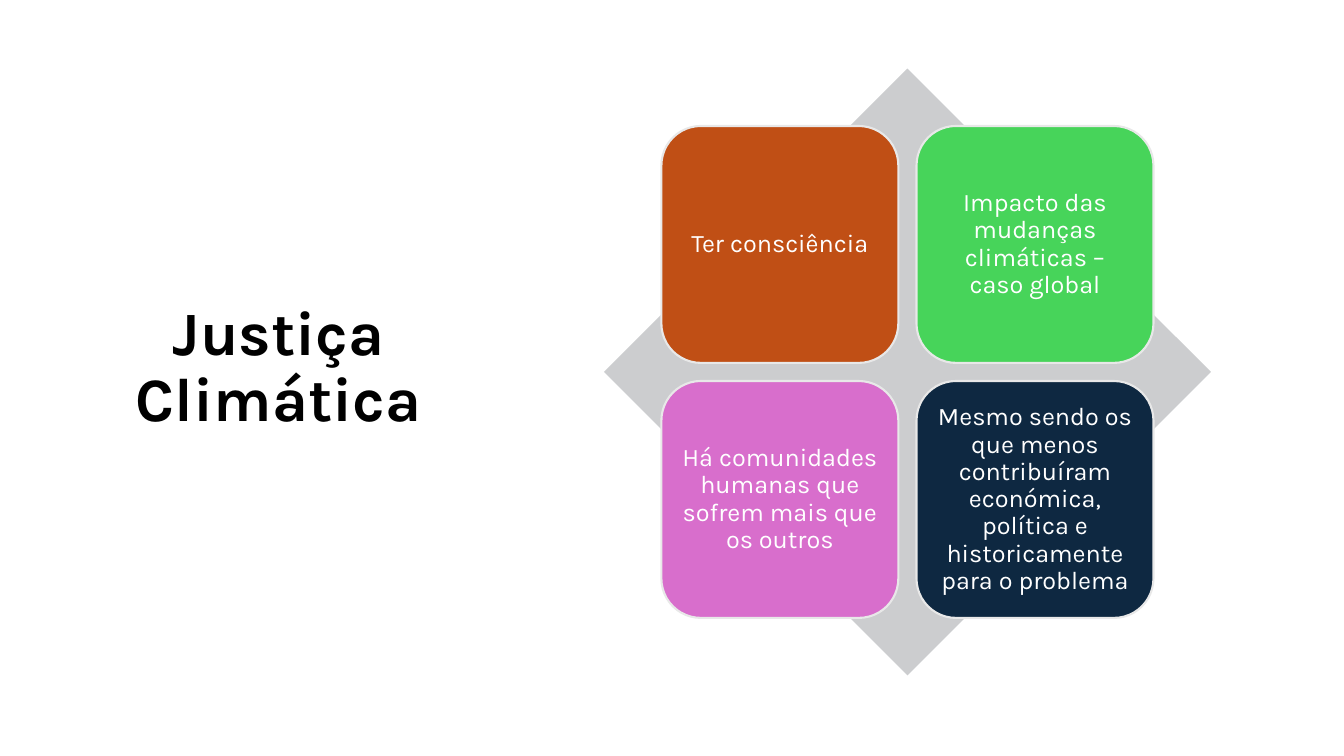
from pptx import Presentation
from pptx.dml.color import RGBColor
from pptx.enum.shapes import MSO_SHAPE
from pptx.enum.text import MSO_ANCHOR, MSO_AUTO_SIZE, PP_ALIGN
from pptx.util import Inches, Pt

COLORS = {
    "title": "000000", "text": "FFFFFF", "diamond": "CCCDCF", "border": "E8E8E8",
    "orange": "C04F15", "green": "47D45A", "pink": "D86ECC", "navy": "0E2841",
}
CARDS = [
    ("Ter consciência", "orange"),
    ("Impacto das mudanças climáticas – caso global", "green"),
    ("Há comunidades humanas que sofrem mais que os outros", "pink"),
    ("Mesmo sendo os que menos contribuíram económica, política e "
     "historicamente para o problema", "navy"),
]
TITLE_FONT = {"name": "Karla", "size": Pt(44), "bold": True}
CARD_FONT = {"name": "Karla", "size": Pt(18), "bold": False}
CARD_FRAME = {f"margin_{side}": Inches(0.07) for side in ("left", "right", "top", "bottom")}


def rgb(name):
    """Return the named colour."""
    return RGBColor.from_string(COLORS[name])


def set_attrs(obj, values):
    """Set each attribute from a dict of values."""
    for name, value in values.items():
        setattr(obj, name, value)


def write_text(sp, text, font, color, frame):
    """Write one centred paragraph in a shape."""
    tf = sp.text_frame
    set_attrs(tf, {"word_wrap": True, "auto_size": MSO_AUTO_SIZE.NONE,
                   "vertical_anchor": MSO_ANCHOR.MIDDLE, **frame})
    p = tf.paragraphs[0]
    set_attrs(p, {"alignment": PP_ALIGN.CENTER, "line_spacing": 0.9})
    r = p.add_run()
    r.text = text
    set_attrs(r.font, font)
    r.font.color.rgb = rgb(color)


def add_block(s, kind, left, top, size, color):
    """Add a square filled shape without shadow."""
    sp = s.shapes.add_shape(kind, *(Inches(v) for v in (left, top, size, size)))
    sp.shadow.inherit = False
    sp.fill.solid()
    sp.fill.fore_color.rgb = rgb(color)
    return sp


def add_title(s, left, top, width, height):
    """Place the slide title in its box."""
    sp = s.shapes.title
    set_attrs(sp, {"left": Inches(left), "top": Inches(top),
                   "width": Inches(width), "height": Inches(height)})
    write_text(sp, "Justiça Climática", TITLE_FONT, "title", {})


def add_matrix(s, left, top, size):
    """Draw the diamond with its two by two grid of cards."""
    diamond = add_block(s, MSO_SHAPE.DIAMOND, left, top, size, "diamond")
    diamond.line.fill.background()
    card, pitch = 2.35, 2.53
    margin = (size - pitch - card) / 2
    for i, (text, color) in enumerate(CARDS):
        row, col = divmod(i, 2)
        sp = add_block(s, MSO_SHAPE.ROUNDED_RECTANGLE, left + margin + col * pitch,
                       top + margin + row * pitch, card, color)
        sp.line.color.rgb = rgb("border")
        sp.line.width = Pt(1.5)
        write_text(sp, text, CARD_FONT, "text", CARD_FRAME)


def main():
    """Build the slide and save it."""
    prs = Presentation()
    set_attrs(prs, {"slide_width": Inches(13.33), "slide_height": Inches(7.5)})
    s = prs.slides.add_slide(prs.slide_layouts[5])
    add_title(s, 0.92, 0.61, 3.69, 6.09)
    add_matrix(s, 5.99, 0.68, 6.02)
    prs.save("out.pptx")


if __name__ == "__main__":
    main()
